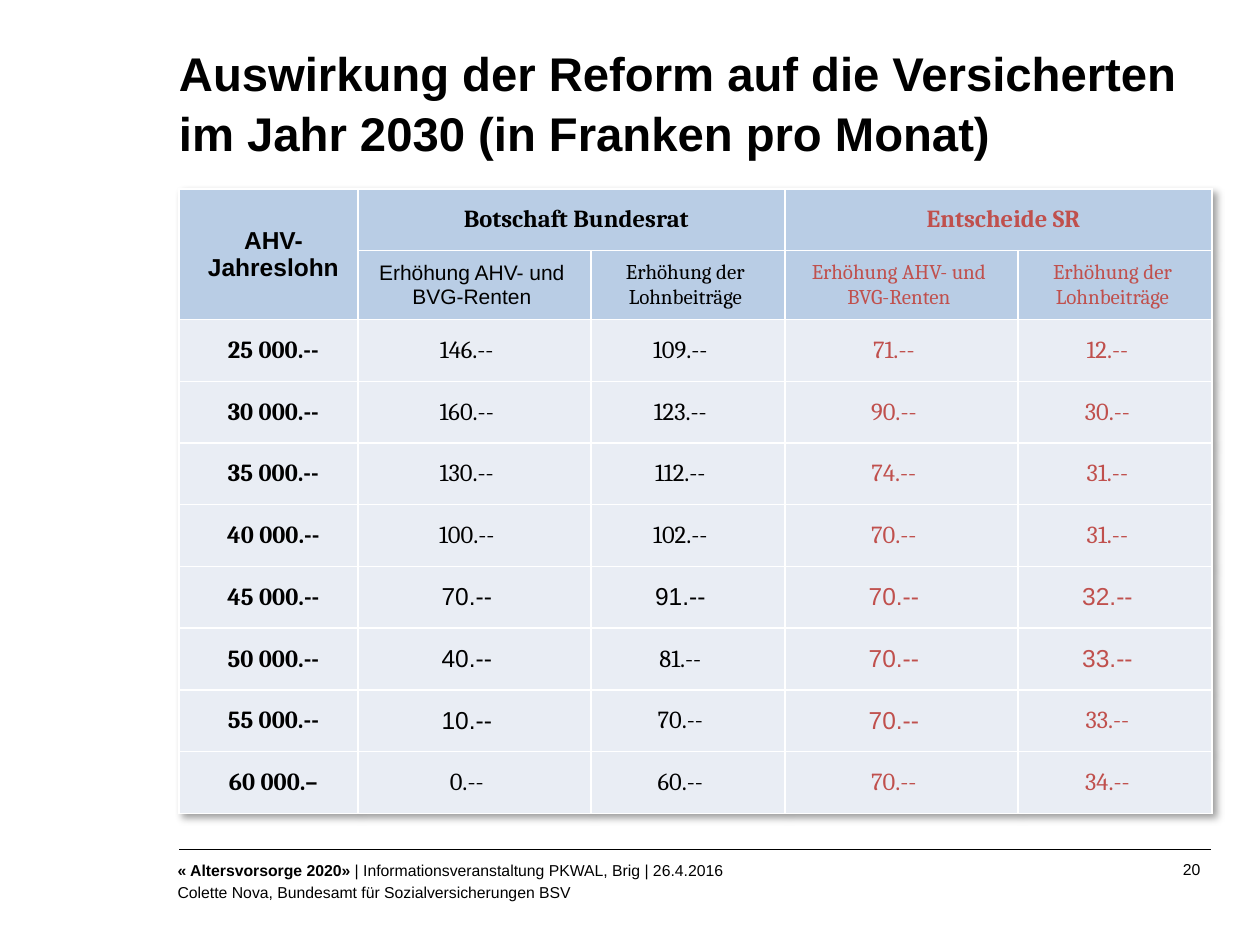
from pptx import Presentation
from pptx.dml.color import RGBColor
from pptx.enum.shapes import MSO_CONNECTOR
from pptx.enum.text import MSO_ANCHOR, PP_ALIGN
from pptx.oxml import parse_xml
from pptx.oxml.ns import nsdecls
from pptx.util import Inches, Pt

LEFT, CENTER, RIGHT = PP_ALIGN.LEFT, PP_ALIGN.CENTER, PP_ALIGN.RIGHT
MIDDLE = MSO_ANCHOR.MIDDLE
STRAIGHT = MSO_CONNECTOR.STRAIGHT

BLACK = RGBColor(0x00, 0x00, 0x00)
WHITE = RGBColor(0xFF, 0xFF, 0xFF)
RED = RGBColor(0xC0, 0x50, 0x4D)
HEADER_BLUE = RGBColor(0xB9, 0xCD, 0xE5)
BODY_BLUE = RGBColor(0xE9, 0xED, 0xF4)
SANS, SERIF = "Arial", "Cambria"

COLUMN_WIDTHS = [1.42, 1.85, 1.54, 1.85, 1.54]
ROW_HEIGHT = 0.49
INCREASE_PENSIONS = "Erhöhung AHV- und\nBVG-Renten"
INCREASE_CONTRIBUTIONS = "Erhöhung der Lohnbeiträge"
SUBHEADERS = [INCREASE_PENSIONS, INCREASE_CONTRIBUTIONS] * 2
SALARY_ROWS = [
    ["25 000.--", "146.--", "109.--", "71.--", "12.--"],
    ["30 000.--", "160.--", "123.--", "90.--", "30.--"],
    ["35 000.--", "130.--", "112.--", "74.--", "31.--"],
    ["40 000.--", "100.--", "102.--", "70.--", "31.--"],
    ["45 000.--", "70.--", "91.--", "70.--", "32.--"],
    ["50 000.--", "40.--", "81.--", "70.--", "33.--"],
    ["55 000.--", "10.--", "70.--", "70.--", "33.--"],
    ["60 000.–", "0.--", "60.--", "70.--", "34.--"],
]
# Table cells (row, column) set in the sans font
SANS_CELLS = {(0, 0), (1, 1), (6, 1), (6, 2), (6, 3), (6, 4),
              (7, 1), (7, 3), (7, 4), (8, 1), (8, 3)}


def add_span(para, text, size, bold=False, font=SANS, color=BLACK):
    for index, line in enumerate(text.split("\n")):
        if index:
            para.add_line_break()
        span = para.add_run()
        span.text = line
        span.font.size = Pt(size)
        span.font.bold = bold
        span.font.name = font
        span.font.color.rgb = color


def add_text_box(page, left, top, width, height):
    box = page.shapes.add_textbox(Inches(left), Inches(top), Inches(width), Inches(height))
    frame = box.text_frame
    frame.word_wrap = True
    frame.margin_left = frame.margin_top = frame.margin_right = frame.margin_bottom = 0
    return frame


def add_title(page, left, top, width, height):
    para = add_text_box(page, left, top, width, height).paragraphs[0]
    para.line_spacing = 1.05
    add_span(para, "Auswirkung der Reform auf die Versicherten "
                   "im Jahr 2030 (in Franken pro Monat)", 27, bold=True)


def add_borders(cell):
    properties = cell._tc.get_or_add_tcPr()
    for side in ("lnL", "lnR", "lnT", "lnB"):
        properties.append(parse_xml(
            f'<a:{side} {nsdecls("a")} w="12700"><a:solidFill>'
            f'<a:srgbClr val="{WHITE}"/></a:solidFill></a:{side}>'))


def fill_cell(cell, row, column, text):
    is_subheader = row == 1
    is_value = row > 1 and column > 0
    cell.vertical_anchor = MIDDLE
    cell.margin_left = Inches(0.04 if is_value else 0.12)
    cell.margin_right = Inches(0.16 if is_value or is_subheader and column else 0.04)
    cell.margin_top = cell.margin_bottom = Inches(0.04)
    para = cell.text_frame.paragraphs[0]
    para.alignment = CENTER
    if text:
        add_span(para, text, 12 if is_subheader else 14,
                 bold=row == 0 or column == 0,
                 font=SANS if (row, column) in SANS_CELLS else SERIF,
                 color=RED if column >= 3 else BLACK)


def add_effects_table(page, left, top):
    headers = [["AHV-Jahreslohn", "Botschaft Bundesrat", "", "Entscheide SR", ""],
               ["", *SUBHEADERS]]
    rows = headers + SALARY_ROWS
    table = page.shapes.add_table(
        len(rows), len(COLUMN_WIDTHS), Inches(left), Inches(top),
        Inches(sum(COLUMN_WIDTHS)), Inches(ROW_HEIGHT * len(rows))).table
    table.horz_banding = False
    table.first_row = False
    for column, width in zip(table.columns, COLUMN_WIDTHS):
        column.width = Inches(width)

    for r, texts in enumerate(rows):
        table.rows[r].height = Inches(ROW_HEIGHT)
        for c, text in enumerate(texts):
            cell = table.cell(r, c)
            add_borders(cell)
            cell.fill.solid()
            cell.fill.fore_color.rgb = HEADER_BLUE if r < len(headers) else BODY_BLUE
            fill_cell(cell, r, c, text)

    # Merged headers
    table.cell(0, 0).merge(table.cell(1, 0))
    for c in (1, 3):
        table.cell(0, c).merge(table.cell(0, c + 1))

    # Soft shadow to the lower right
    table._tbl.tblPr.insert(0, parse_xml(
        f'<a:effectLst {nsdecls("a")}><a:outerShdw blurRad="50800" dist="38100" '
        'dir="2700000" algn="tl" rotWithShape="0"><a:srgbClr val="000000">'
        '<a:alpha val="40000"/></a:srgbClr></a:outerShdw></a:effectLst>'))


def add_footer(page, left, top, width):
    # Rule
    rule = page.shapes.add_connector(STRAIGHT, Inches(left + width), Inches(top),
                                     Inches(left), Inches(top))
    rule.line.color.rgb = BLACK
    rule.line.width = Pt(0.75)
    rule._element.spPr.append(parse_xml(f'<a:effectLst {nsdecls("a")}/>'))

    # Event and speaker
    frame = add_text_box(page, left - 0.01, top + 0.09, 7.46, 0.47)
    event = frame.paragraphs[0]
    event.alignment = LEFT
    event.space_after = Pt(1)
    add_span(event, "« Altersvorsorge 2020» ", 9, bold=True)
    add_span(event, "| Informationsveranstaltung PKWAL, Brig | 26.4.2016", 9)
    speaker = frame.add_paragraph()
    speaker.alignment = LEFT
    speaker.space_before = Pt(1)
    add_span(speaker, "Colette Nova, Bundesamt für Sozialversicherungen BSV", 9)

    # Page number
    number = add_text_box(page, left + width - 0.44, top + 0.08, 0.39, 0.16).paragraphs[0]
    number.alignment = RIGHT
    add_span(number, "20 ", 9)


def main():
    deck = Presentation()
    deck.slide_width, deck.slide_height = Inches(10), Inches(7.5)
    page = deck.slides.add_slide(deck.slide_layouts[6])
    add_footer(page, 1.42, 6.74, 8.19)
    add_title(page, 1.42, 0.33, 8.19, 0.71)
    add_effects_table(page, 1.42, 1.5)
    deck.save("out.pptx")


if __name__ == "__main__":
    main()
